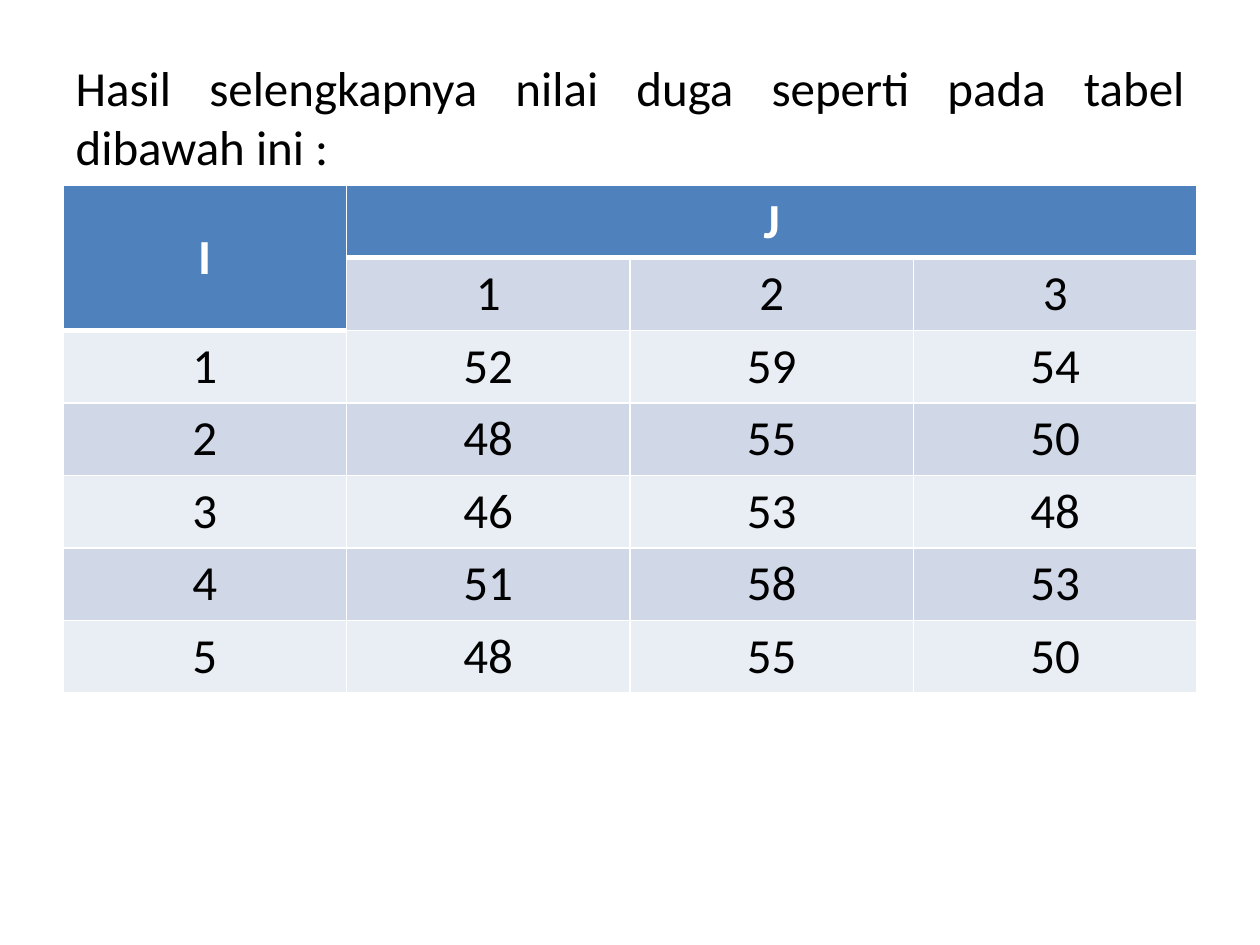
from lxml import etree
from pptx import Presentation, util as u
from pptx.dml.color import RGBColor
from pptx.enum import text
from pptx.oxml import ns

TITLE = "Hasil selengkapnya nilai duga seperti pada tabel dibawah ini :"
ROWS = [
    ("I", "J", "", ""),
    ("", "1", "2", "3"),
    ("1", "52", "59", "54"),
    ("2", "48", "55", "50"),
    ("3", "46", "53", "48"),
    ("4", "51", "58", "53"),
    ("5", "48", "55", "50"),
]
COLORS = {"header": "4F81BD", "dark": "D0D8E8", "light": "E9EDF4",
          "white": "FFFFFF", "black": "000000"}
FONT, SIZE = "Calibri", 28
MARGIN, TABLE_TOP, ROW_HEIGHT = 0.5, 1.47, 0.57


def write(frame, content, color, alignment, bold=False):
    frame.vertical_anchor = text.MSO_ANCHOR.MIDDLE
    paragraph = frame.paragraphs[0]
    paragraph.alignment = alignment
    run = paragraph.add_run()
    run.text = content
    run.font.name, run.font.size, run.font.bold = FONT, u.Pt(SIZE), bold
    run.font.color.rgb = RGBColor.from_string(COLORS[color])


def is_header(row, column):
    return row == 0 or (row, column) == (1, 0)


def add_borders(cell, widths):
    properties = cell._tc.get_or_add_tcPr()
    for index, (side, width) in enumerate(widths.items()):
        line = etree.Element(ns.qn(f"a:ln{side}"), w=str(u.Pt(width)))
        fill = etree.SubElement(line, ns.qn("a:solidFill"))
        etree.SubElement(fill, ns.qn("a:srgbClr"), val=COLORS["white"])
        properties.insert(index, line)


def add_title(slide, width):
    title = slide.shapes.title
    title.left, title.top = u.Inches(MARGIN), u.Inches(0.3)
    title.width, title.height = width, u.Inches(1.25)
    title.text_frame.word_wrap = True
    title.text_frame.auto_size = text.MSO_AUTO_SIZE.NONE
    write(title.text_frame, TITLE, "black", text.PP_ALIGN.JUSTIFY)


def add_estimates(slide, width):
    table = slide.shapes.add_table(
        len(ROWS), len(ROWS[0]), u.Inches(MARGIN), u.Inches(TABLE_TOP),
        width, u.Inches(ROW_HEIGHT * len(ROWS))).table
    table.cell(0, 0).merge(table.cell(1, 0))
    table.cell(0, 1).merge(table.cell(0, 3))
    for row, values in enumerate(ROWS):
        for column, value in enumerate(values):
            cell = table.cell(row, column)
            header = is_header(row, column)
            band = "header" if header else ("dark" if row % 2 else "light")
            cell.fill.solid()
            cell.fill.fore_color.rgb = RGBColor.from_string(COLORS[band])
            below_header = row > 0 and not header and is_header(row - 1, column)
            add_borders(cell, {"L": 1, "R": 1, "T": 3 if below_header else 1,
                               "B": 3 if header else 1})
            cell.vertical_anchor = text.MSO_ANCHOR.MIDDLE
            if value:
                write(cell.text_frame, value, "white" if header else "black",
                      text.PP_ALIGN.CENTER, header)


def main():
    presentation = Presentation()
    presentation.slide_width, presentation.slide_height = u.Inches(10), u.Inches(7.5)
    slide = presentation.slides.add_slide(presentation.slide_layouts[5])
    width = presentation.slide_width - 2 * u.Inches(MARGIN)
    add_title(slide, width)
    add_estimates(slide, width)
    presentation.save("out.pptx")


if __name__ == "__main__":
    main()
